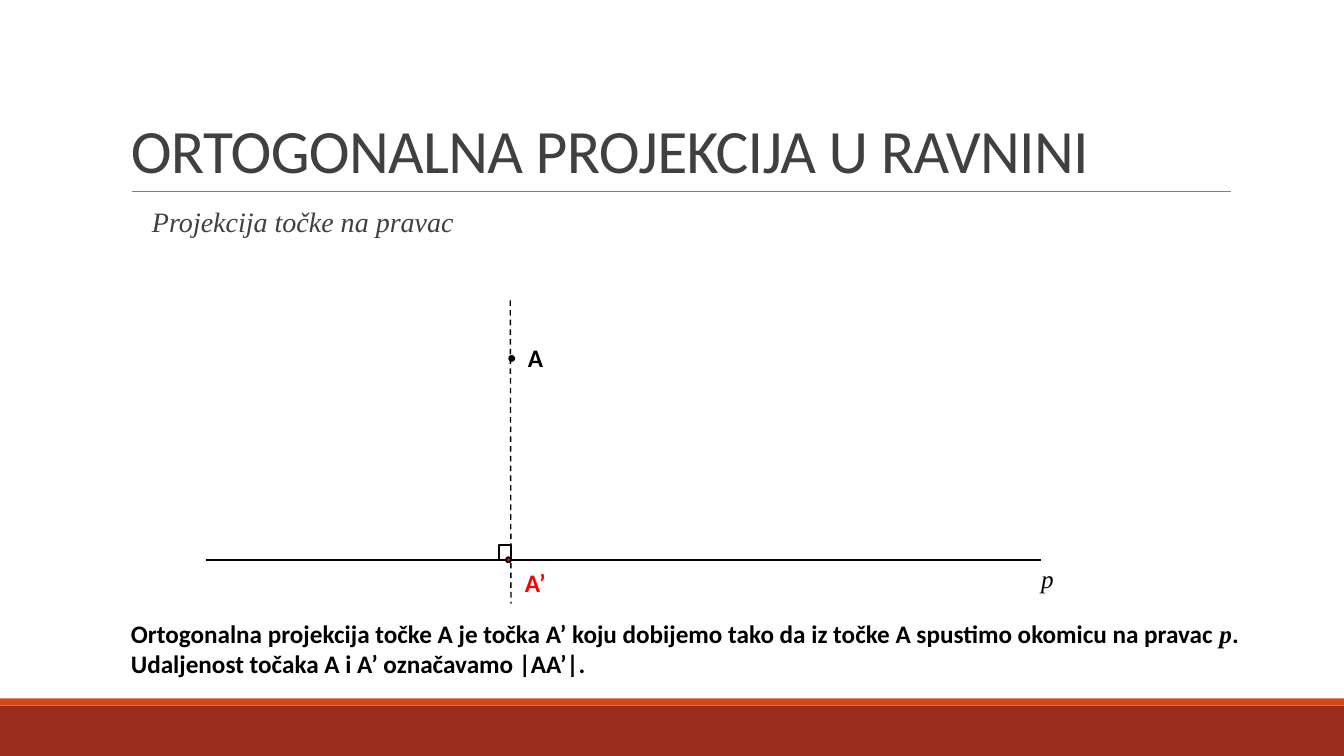
from pptx import Presentation
from pptx.dml.color import RGBColor
from pptx.enum.dml import MSO_LINE
from pptx.enum.shapes import MSO_CONNECTOR, MSO_SHAPE
from pptx.enum.text import MSO_ANCHOR, PP_ALIGN
from pptx.oxml.xmlchemy import OxmlElement
from pptx.util import Pt

RECT, OVAL = MSO_SHAPE.RECTANGLE, MSO_SHAPE.OVAL
STRAIGHT, DASH = MSO_CONNECTOR.STRAIGHT, MSO_LINE.DASH
TOP, BOTTOM = MSO_ANCHOR.TOP, MSO_ANCHOR.BOTTOM
LEFT, JUSTIFY = PP_ALIGN.LEFT, PP_ALIGN.JUSTIFY
SANS, SERIF = "Calibri", "Times New Roman"
COLORS = {name: RGBColor.from_string(code) for name, code in {
    "footer": "9B2D1F", "accent": "D34817", "rule": "808080",
    "heading": "404040", "black": "000000", "red": "FF0000",
}.items()}

deck = Presentation()
deck.slide_width, deck.slide_height = Pt(960), Pt(540)
page = deck.slides.add_slide(deck.slide_layouts[6])


def add_figure(kind, left, top, width, height, fill=None, outline=None):
    shape = page.shapes.add_shape(kind, Pt(left), Pt(top), Pt(width), Pt(height))
    shape.shadow.inherit = False
    if fill:
        shape.fill.solid()
        shape.fill.fore_color.rgb = COLORS[fill]
    else:
        shape.fill.background()
    if outline:
        shape.line.color.rgb = COLORS[outline]
        shape.line.width = Pt(1.25)
    else:
        shape.line.fill.background()


def add_text(left, top, width, height, paragraphs, size, color, wrap=True,
             anchor=TOP, align=LEFT, spacing=None):
    box = page.shapes.add_textbox(Pt(left), Pt(top), Pt(width), Pt(height))
    frame = box.text_frame
    frame.word_wrap = wrap
    frame.vertical_anchor = anchor
    for index, spans in enumerate(paragraphs):
        para = frame.add_paragraph() if index else frame.paragraphs[0]
        para.alignment = align
        if spacing:
            para.line_spacing = spacing
        for text, font, bold, italic in spans:
            span = para.add_run()
            span.text = text
            span.font.name = font
            span.font.size = Pt(size)
            span.font.bold = bold
            span.font.italic = italic
            span.font.color.rgb = COLORS[color]
    return box


add_figure(RECT, 0, 504, 960, 36, "footer")
add_figure(RECT, 0, 498.8, 960, 5.2, "accent")

title = add_text(86.4, 22.3, 792, 114.5,
                 [[("ORTOGONALNA PROJEKCIJA U RAVNINI", SANS, False, False)]],
                 44, "heading", anchor=BOTTOM, spacing=0.85)
for properties in title.element.xpath(".//a:rPr"):
    properties.set("spc", "-50")

subtitle = add_text(86.4, 145.4, 792, 316.8,
                    [[("Projekcija točke na pravac", SERIF, False, True)]],
                    20, "heading", spacing=0.9)
subtitle.text_frame.margin_left = Pt(22.2)
subtitle.text_frame.margin_right = 0

for x1, y1, x2, y2, color, weight, dash in [
    (94.3, 136.8, 879.1, 136.8, "rule", 0.5, None),
    (147.3, 399.9, 743.3, 399.9, "black", 1, None),
    (364.5, 214.5, 365, 431.2, "black", 1, DASH),
]:
    line = page.shapes.add_connector(STRAIGHT, Pt(x1), Pt(y1), Pt(x2), Pt(y2))
    line.line.color.rgb = COLORS[color]
    line.line.width = Pt(weight)
    if dash:
        line.line.dash_style = dash
    line.element.spPr.append(OxmlElement("a:effectLst"))

add_figure(RECT, 356.4, 389.4, 8.6, 10.6, outline="black")
for left, top, color in [(361.4, 398.1, "red"), (363.7, 254.2, "black")]:
    add_figure(OVAL, left, top, 3.6, 3.6, color, "black")

for text, left, top, width, font, bold, italic, color in [
    ("p", 736.6, 398.9, 24.5, SERIF, False, True, "black"),
    ("A’", 367.9, 401.8, 29.5, SANS, True, False, "red"),
    ("A", 370, 241.2, 32.4, SANS, True, False, "black"),
]:
    add_text(left, top, width, 28.8, [[(text, font, bold, italic)]], 18, color, wrap=False)

add_text(86.4, 437.8, 811.4, 51.1, [
    [("Ortogonalna projekcija točke A je točka A’ koju dobijemo tako da iz točke A "
      "spustimo okomicu na pravac ", SANS, True, False),
     ("p", SERIF, True, True),
     (". ", SANS, True, False)],
    [("Udaljenost točaka A i A’ označavamo |AA’|.", SANS, True, False)],
], 18, "black", align=JUSTIFY)

deck.save("out.pptx")
